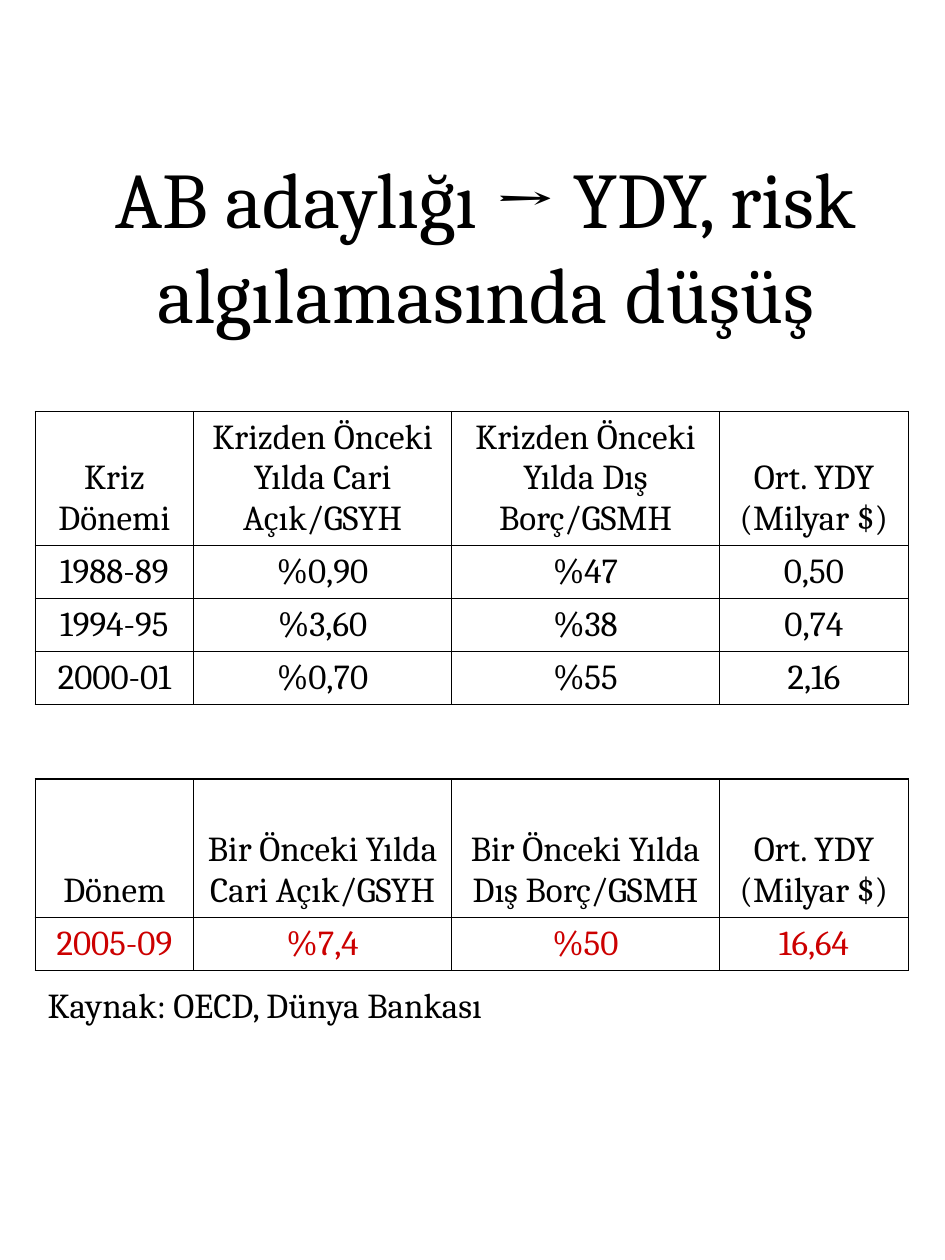
from lxml import etree
from pptx import Presentation
from pptx import util as u
from pptx.dml.color import RGBColor
from pptx.enum import text
from pptx.oxml import ns

TITLE = "AB adaylığı → YDY, risk algılamasında düşüş"
SOURCE = "Kaynak: OECD, Dünya Bankası"
CRISES = [
    ("Kriz Dönemi", "Krizden Önceki Yılda Cari Açık/GSYH",
     "Krizden Önceki Yılda Dış Borç/GSMH", "Ort. YDY (Milyar $)"),
    ("1988-89", "%0,90", "%47", "0,50"),
    ("1994-95", "%3,60", "%38", "0,74"),
    ("2000-01", "%0,70", "%55", "2,16"),
]
PERIOD_HEAD = [("Dönem", "Bir Önceki Yılda Cari Açık/GSYH",
                "Bir Önceki Yılda Dış Borç/GSMH", "Ort. YDY (Milyar $)")]
PERIOD = [("2005-09", "%7,4", "%50", "16,64")]

THEME = {"font": "Cambria", "title": 45, "body": 20, "ink": "000000",
         "accent": "CC0000", "border": 1}
LEFT = 20.16
COLUMNS = (90.5, 147.5, 153, 108)
ROW = 30.3
TABLES = [
    (CRISES, 235.2, [76.5] + [ROW] * 3, "ink"),
    (PERIOD_HEAD, 445.2, [79], "ink"),
    (PERIOD, 524.2, [ROW], "accent"),
]


def apply(target, values):
    for name, value in values.items():
        setattr(target, name, value)


def write(frame, words, size, color, align):
    para = frame.paragraphs[0]
    para.alignment = align
    span = para.add_run()
    span.text = words
    apply(span.font, {"name": THEME["font"], "size": u.Pt(THEME[size])})
    span.font.color.rgb = RGBColor.from_string(THEME[color])


def add_borders(cell):
    properties = cell._tc.get_or_add_tcPr()
    for index, side in enumerate(("lnL", "lnR", "lnT", "lnB")):
        line = etree.Element(ns.qn("a:" + side), w=str(u.Pt(THEME["border"])))
        fill = etree.SubElement(line, ns.qn("a:solidFill"))
        etree.SubElement(fill, ns.qn("a:srgbClr"), val=THEME["ink"])
        properties.insert(index, line)


def add_grid(page, rows, top, heights, color):
    frame = page.shapes.add_table(
        len(rows), len(COLUMNS), u.Pt(LEFT), u.Pt(top),
        u.Pt(sum(COLUMNS)), u.Pt(sum(heights)))
    table = frame.table
    apply(table, {"first_row": False, "horz_banding": False})
    for column, width in zip(table.columns, COLUMNS):
        column.width = u.Pt(width)
    for row, height, values in zip(table.rows, heights, rows):
        row.height = u.Pt(height)
        for cell, value in zip(row.cells, values):
            cell.fill.background()
            cell.vertical_anchor = text.MSO_ANCHOR.BOTTOM
            write(cell.text_frame, value, "body", color, text.PP_ALIGN.CENTER)
            add_borders(cell)


def place(box, left, top, width, height):
    apply(box, {"left": u.Pt(left), "top": u.Pt(top),
                "width": u.Pt(width), "height": u.Pt(height)})
    apply(box.text_frame, {"word_wrap": True,
                           "auto_size": text.MSO_AUTO_SIZE.NONE,
                           "vertical_anchor": text.MSO_ANCHOR.TOP})


def main():
    deck = Presentation()
    apply(deck, {"slide_width": u.Pt(540), "slide_height": u.Pt(720)})
    page = deck.slides.add_slide(deck.slide_layouts[5])

    title = page.shapes.title
    place(title, 15, 82, 525, 187)
    write(title.text_frame, TITLE, "title", "ink", text.PP_ALIGN.CENTER)

    for rows, top, heights, color in TABLES:
        add_grid(page, rows, top, heights, color)

    source = page.shapes.add_textbox(0, 0, 0, 0)
    place(source, LEFT, 558.7, 374.4, 28)
    write(source.text_frame, SOURCE, "body", "ink", text.PP_ALIGN.LEFT)

    deck.save("out.pptx")


if __name__ == "__main__":
    main()
